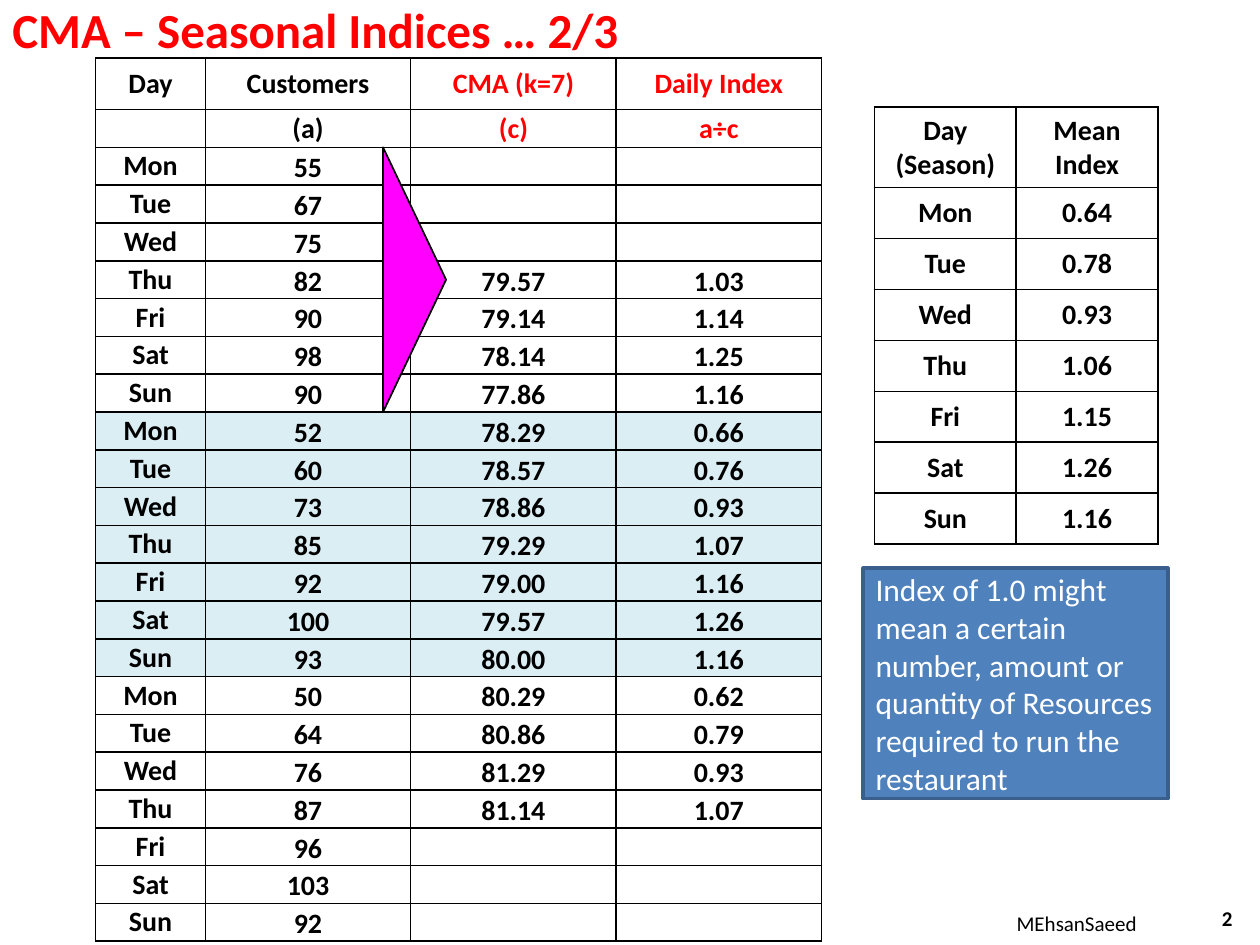
from dataclasses import dataclass
from itertools import product
from typing import Any

from pptx import Presentation
from pptx.dml.color import RGBColor
from pptx.enum.shapes import MSO_SHAPE as Shape
from pptx.enum.text import MSO_ANCHOR as Anchor, PP_ALIGN as Align
from pptx.oxml.ns import qn
from pptx.util import Inches, Pt
from lxml.etree import SubElement

BLACK = RGBColor(0x00, 0x00, 0x00)
WHITE = RGBColor(0xFF, 0xFF, 0xFF)
RED = RGBColor(0xFF, 0x00, 0x00)
MAGENTA = RGBColor(0xFF, 0x00, 0xFF)
BLUE = RGBColor(0x4F, 0x81, 0xBD)
DARK_BLUE = RGBColor(0x3A, 0x5F, 0x8C)
PALE_BLUE = RGBColor(0xDB, 0xEE, 0xF4)

WEEK = ["Mon", "Tue", "Wed", "Thu", "Fri", "Sat", "Sun"]
CUSTOMERS = [55, 67, 75, 82, 90, 98, 90,
             52, 60, 73, 85, 92, 100, 93,
             50, 64, 76, 87, 96, 103, 92]
AVERAGES = ["79.57", "79.14", "78.14", "77.86", "78.29", "78.57", "78.86", "79.29",
            "79.00", "79.57", "80.00", "80.29", "80.86", "81.29", "81.14"]
DAILY_INDICES = ["1.03", "1.14", "1.25", "1.16", "0.66", "0.76", "0.93", "1.07",
                 "1.16", "1.26", "1.16", "0.62", "0.79", "0.93", "1.07"]
MEAN_INDICES = ["0.64", "0.78", "0.93", "1.06", "1.15", "1.26", "1.16"]
SECOND_WEEK = range(9, 16)
UNAVERAGED = [("", "")] * 3


def write(frame, text, size=16, color=BLACK, bold=False, align=Align.LEFT,
          anchor=Anchor.MIDDLE, font="Calibri"):
    frame.word_wrap = True
    frame.vertical_anchor = anchor
    paragraph = frame.paragraphs[0]
    paragraph.alignment = align
    if not text:
        SubElement(paragraph._p, qn("a:endParaRPr"), sz=str(size * 100))
        return
    run = paragraph.add_run()
    run.text = text
    run.font.name = font
    run.font.size = Pt(size)
    run.font.bold = bold
    run.font.color.rgb = color


def outline_cell(cell, width=1, color=BLACK):
    properties = cell._tc.get_or_add_tcPr()
    for index, side in enumerate(("a:lnL", "a:lnR", "a:lnT", "a:lnB")):
        border = properties.makeelement(qn(side), {"w": str(Pt(width))})
        fill = SubElement(border, qn("a:solidFill"))
        SubElement(fill, qn("a:srgbClr"), val=str(color))
        properties.insert(index, border)


@dataclass
class SlideBuilder:
    slide: Any
    font: str = "Calibri"

    def label(self, box, text, **style):
        textbox = self.slide.shapes.add_textbox(*map(Inches, box))
        write(textbox.text_frame, text, font=self.font, **style)

    def shape(self, kind, box, fill, line, line_width, rotation=0):
        figure = self.slide.shapes.add_shape(kind, *map(Inches, box))
        figure.shadow.inherit = False
        figure.rotation = rotation
        figure.fill.solid()
        figure.fill.fore_color.rgb = fill
        figure.line.color.rgb = line
        figure.line.width = Pt(line_width)
        return figure

    def table(self, box, widths, header_height, rows, header_color=BLACK, header_rows=1,
              shaded=(), bottom_columns=(), padded_header=False):
        grid = self.slide.shapes.add_table(len(rows), len(widths), *map(Inches, box)).table
        grid.first_row = grid.horz_banding = False
        for column, width in zip(grid.columns, widths):
            column.width = Inches(width)
        body_height = (box[3] - header_height) / (len(rows) - 1)
        for r, row in enumerate(grid.rows):
            row.height = Inches(body_height if r else header_height)
        for r, c in product(range(len(rows)), range(len(widths))):
            cell = grid.cell(r, c)
            is_header = r < header_rows
            if not (padded_header and is_header):
                cell.margin_left = cell.margin_right = 0
                cell.margin_top = cell.margin_bottom = 0
            if r in shaded:
                cell.fill.solid()
                cell.fill.fore_color.rgb = PALE_BLUE
            else:
                cell.fill.background()
            outline_cell(cell)
            at_bottom = c in bottom_columns and not is_header
            write(cell.text_frame, rows[r][c], font=self.font, bold=True, align=Align.CENTER,
                  color=header_color if is_header else BLACK)
            cell.vertical_anchor = Anchor.BOTTOM if at_bottom else Anchor.MIDDLE


def main():
    deck = Presentation()
    deck.slide_width, deck.slide_height = Inches(10), Inches(7.5)
    page = SlideBuilder(deck.slides.add_slide(deck.slide_layouts[6]))

    visits = [("Day", "Customers"), ("", "(a)")]
    visits += zip(WEEK * 3, map(str, CUSTOMERS))
    page.table((0.76, 0.46, 2.5, 7.01), (0.87, 1.63), 0.41, visits, header_rows=2,
               shaded=SECOND_WEEK, bottom_columns=(1,))

    page.label((0, -0.07, 6, 0.6), "CMA – Seasonal Indices … 2/3", size=28, color=RED, bold=True)
    page.label((9.6, 7.09, 0.4, 0.4), "2", size=12, bold=True)

    seasons = [("Day (Season)", "Mean Index"), *zip(WEEK, MEAN_INDICES)]
    page.table((6.94, 0.85, 2.25, 3.47), (1.125, 1.125), 0.64, seasons, padded_header=True)

    page.label((7.92, 7.13, 1.25, 0.4), "MEhsanSaeed", size=12, align=Align.CENTER)

    resource_note = page.shape(Shape.RECTANGLE, (6.85, 4.51, 2.42, 1.83), BLUE, DARK_BLUE, 2)
    write(resource_note.text_frame,
          "Index of 1.0 might mean a certain number, amount or quantity of Resources "
          "required to run the restaurant", size=18, color=WHITE)

    averages = [("CMA (k=7)", "Daily Index"), ("(c)", "a÷c"), *UNAVERAGED,
                *zip(AVERAGES, DAILY_INDICES), *UNAVERAGED]
    page.table((3.26, 0.46, 3.26, 7.01), (1.63, 1.63), 0.41, averages, header_color=RED,
               header_rows=2, shaded=SECOND_WEEK, bottom_columns=(0, 1))

    page.shape(Shape.ISOSCELES_TRIANGLE, (2.24, 1.97, 2.1, 0.5), MAGENTA, BLACK, 1, rotation=90)

    deck.save("out.pptx")


if __name__ == "__main__":
    main()
